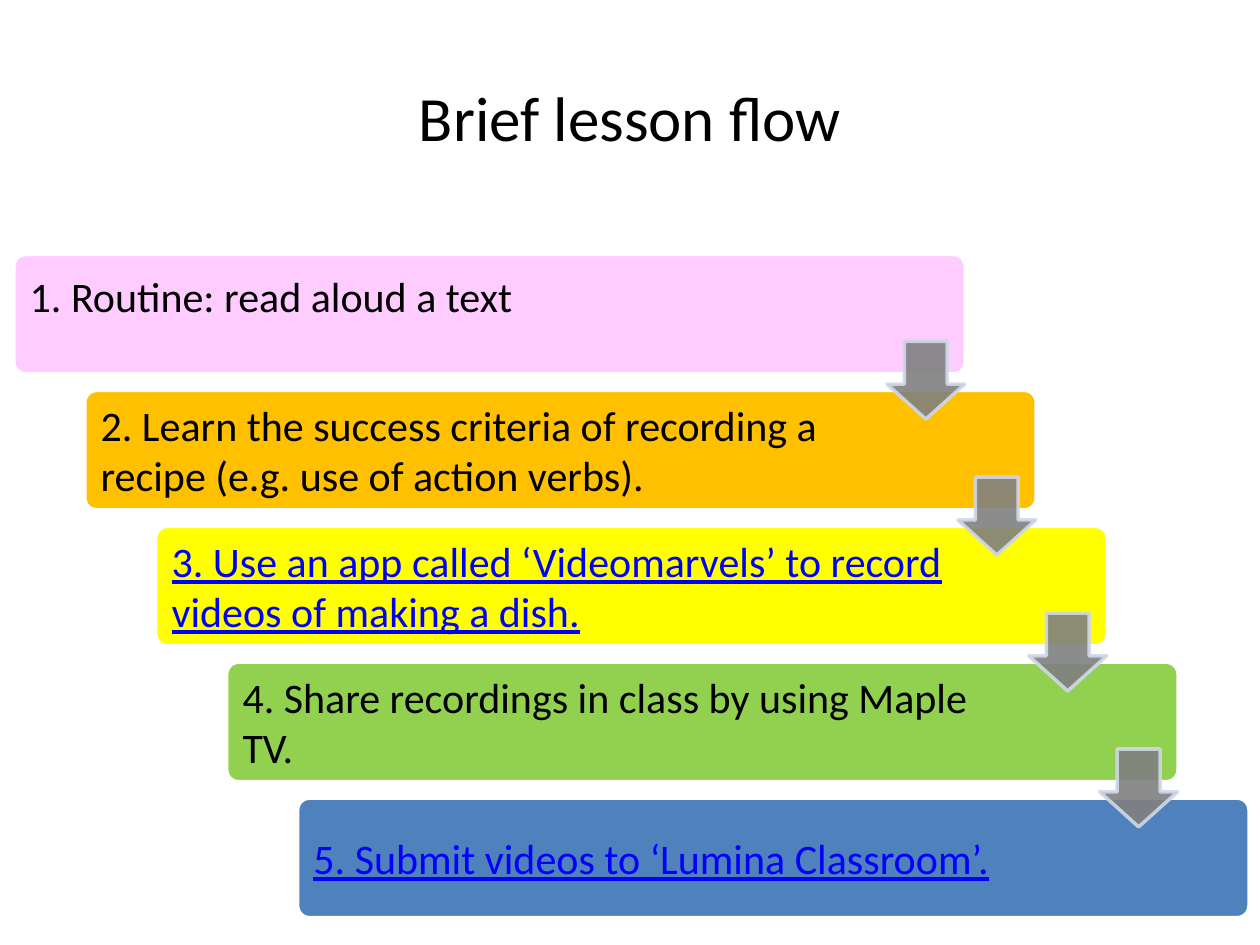
from lxml.etree import SubElement
from pptx import Presentation
from pptx.dml.color import RGBColor as Rgb
from pptx.enum.shapes import MSO_SHAPE as Kind
from pptx.enum.text import MSO_ANCHOR as Anchor, PP_ALIGN as Align
from pptx.oxml.ns import qn
from pptx.util import Cm, Pt

COLORS = {
    "ink": "000000", "link": "0000FF", "edge": "FFFFFF",
    "pink": "FFCCFF", "gold": "FFC000", "lemon": "FFFF00",
    "green": "92D050", "blue": "4F81BD",
    "arrow": "808080", "rim": "D0D8E8",
}
STEPS = [
    ("1. Routine: read aloud a text", "pink", "ink"),
    ("2. Learn the success criteria of recording a recipe "
     "(e.g. use of action verbs).", "gold", "ink"),
    ("3. Use an app called ‘Videomarvels’ to record videos of making a dish.",
     "lemon", "link"),
    ("4. Share recordings in class by using Maple TV.", "green", "ink"),
    ("5. Submit videos to ‘Lumina Classroom’.", "blue", "link"),
]
STEP_X, STEP_Y = 1.43, 2.74


def color(name):
    return Rgb.from_string(COLORS[name])


def fade(fill, percent):
    """Set the opacity of a solid fill, given its parent element."""
    tone = fill.find(qn("a:solidFill"))[0]
    SubElement(tone, qn("a:alpha"), val=str(percent * 1000))


class Deck:
    font = "Calibri"

    def __init__(self):
        self.prs = Presentation()
        self.prs.slide_width, self.prs.slide_height = Cm(25.4), Cm(19.05)
        self.slide = self.prs.slides.add_slide(self.prs.slide_layouts[6])

    def text(self, words, x, y, w, h, size, tone="ink", pad=0.25,
             align=Align.LEFT, anchor=Anchor.MIDDLE):
        box = self.slide.shapes.add_textbox(Cm(x), Cm(y), Cm(w), Cm(h))
        frame = box.text_frame
        frame.word_wrap = True
        frame.vertical_anchor = anchor
        frame.margin_left = frame.margin_right = Cm(pad)
        frame.margin_top = frame.margin_bottom = Cm(pad)
        para = frame.paragraphs[0]
        para.text, para.alignment = words, align
        font = para.font
        font.name, font.size = self.font, Pt(size)
        font.color.rgb = color(tone)
        if tone == "link":
            font.underline = True

    def shape(self, kind, x, y, w, h, fill, line, adjust):
        item = self.slide.shapes.add_shape(kind, Cm(x), Cm(y), Cm(w), Cm(h))
        item.shadow.inherit = False
        item.fill.solid()
        item.fill.fore_color.rgb = color(fill)
        item.line.color.rgb = color(line)
        item.line.width = Pt(2)
        for i, value in enumerate(adjust):
            item.adjustments[i] = value
        return item

    def bar(self, x, y, fill):
        self.shape(Kind.ROUNDED_RECTANGLE, x, y, 19.18, 2.41, fill, "edge", [0.1])

    def arrow(self, x, y):
        item = self.shape(Kind.DOWN_ARROW, x, y, 1.57, 1.57, "arrow", "rim",
                          [0.55, 0.45])
        props = item._element.spPr
        fade(props, 90)
        fade(props.find(qn("a:ln")), 90)

    def save(self):
        self.prs.save("out.pptx")


def main():
    deck = Deck()
    deck.text("Brief lesson flow", 1.27, 0.76, 22.86, 3.18, 36,
              align=Align.CENTER)
    for i, (words, fill, tone) in enumerate(STEPS):
        x, y = 0.28 + i * STEP_X, 5.13 + i * STEP_Y
        deck.bar(x, y, fill)
        deck.text(words, x + 0.07, y + 0.07, 16.03, 2.26, 24, tone,
                  anchor=Anchor.MIDDLE if i else Anchor.TOP)
    for i in range(len(STEPS) - 1):
        deck.arrow(17.88 + i * STEP_X, 6.88 + i * STEP_Y)
    deck.save()


if __name__ == "__main__":
    main()
